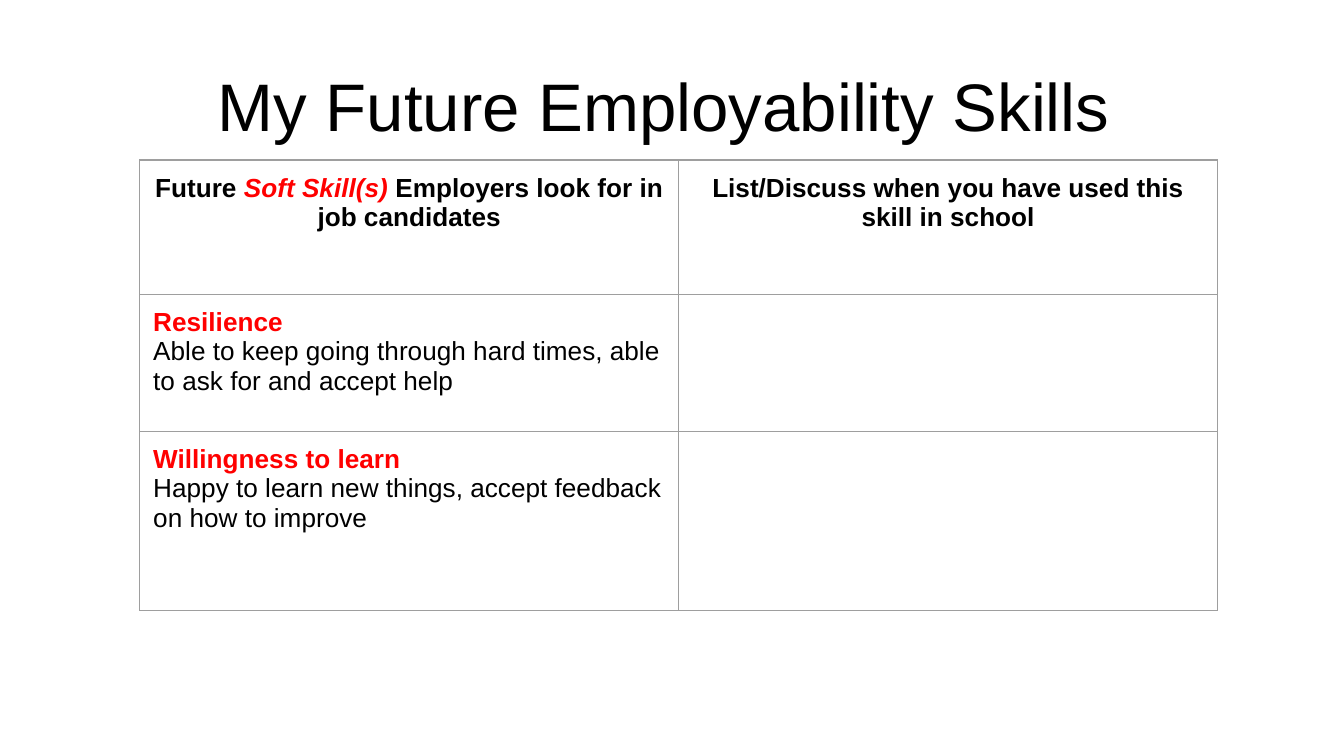
from lxml import etree
from pptx import Presentation
from pptx.dml.color import RGBColor
from pptx.enum.text import MSO_ANCHOR, PP_ALIGN
from pptx.oxml.ns import qn
from pptx.util import Inches, Pt

CENTER, LEFT = PP_ALIGN.CENTER, PP_ALIGN.LEFT
MIDDLE, TOP = MSO_ANCHOR.MIDDLE, MSO_ANCHOR.TOP
TITLE_ONLY = 5
BLACK, RED, GREY = "000000", "FF0000", "9E9E9E"

SLIDE_WIDTH = 10
SLIDE_HEIGHT = SLIDE_WIDTH * 9 / 16
COLUMN_WIDTHS = [4.01, 4.01]
ROW_HEIGHTS = [1, 1.02, 1.33]
HEADERS = [
    [("Future ", BLACK, False), ("Soft Skill(s) ", RED, True),
     ("Employers look for in job candidates", BLACK, False)],
    [("List/Discuss when you have used this skill in school", BLACK, False)],
]
SKILLS = [
    ("Resilience",
     "Able to keep going through hard times, able to ask for and accept help"),
    ("Willingness to learn",
     "Happy to learn new things, accept feedback on how to improve"),
]


def color(value):
    return RGBColor.from_string(value)


class SlideBuilder:
    font = "Arial"
    title_size = 36
    body_size = 14
    margin = 0.1
    border_width = 0.75

    def __init__(self, slide):
        self.slide = slide

    def add_run(self, paragraph, text, size, fill=BLACK, bold=False, italic=False):
        run = paragraph.add_run()
        run.text = text
        run.font.name = self.font
        run.font.size = Pt(size)
        run.font.bold = bold
        run.font.italic = italic
        run.font.color.rgb = color(fill)

    def set_margins(self, target):
        for side in ("left", "top", "right", "bottom"):
            setattr(target, f"margin_{side}", Inches(self.margin))

    def title(self, text, left, top, width, height):
        shape = self.slide.shapes.title
        shape.left, shape.top = Inches(left), Inches(top)
        shape.width, shape.height = Inches(width), Inches(height)
        frame = shape.text_frame
        frame.word_wrap = True
        frame.vertical_anchor = MIDDLE
        self.set_margins(frame)
        paragraph = frame.paragraphs[0]
        paragraph.alignment = CENTER
        self.add_run(paragraph, text, self.title_size)

    def table(self, left, top, widths, heights):
        table = self.slide.shapes.add_table(
            len(heights), len(widths), Inches(left), Inches(top),
            Inches(sum(widths)), Inches(sum(heights))).table
        table.first_row = table.horz_banding = False
        for column, width in zip(table.columns, widths):
            column.width = Inches(width)
        for row, height in zip(table.rows, heights):
            row.height = Inches(height)
        for cell in table.iter_cells():
            self.set_margins(cell)
            cell.vertical_anchor = TOP
            self.borders(cell)
            cell.fill.background()
        return table

    def borders(self, cell):
        properties = cell._tc.get_or_add_tcPr()
        for tag in ("a:lnL", "a:lnR", "a:lnT", "a:lnB"):
            line = etree.SubElement(properties, qn(tag), w=str(Pt(self.border_width)))
            fill = etree.SubElement(line, qn("a:solidFill"))
            etree.SubElement(fill, qn("a:srgbClr"), val=GREY)

    def header_cell(self, cell, runs):
        paragraph = cell.text_frame.paragraphs[0]
        paragraph.alignment = CENTER
        for text, fill, italic in runs:
            self.add_run(paragraph, text, self.body_size, fill, True, italic)

    def skill_cell(self, cell, name, description):
        frame = cell.text_frame
        heading, body = frame.paragraphs[0], frame.add_paragraph()
        heading.alignment = body.alignment = LEFT
        self.add_run(heading, name, self.body_size, RED, bold=True)
        self.add_run(body, description, self.body_size)


def main():
    presentation = Presentation()
    presentation.slide_width = Inches(SLIDE_WIDTH)
    presentation.slide_height = Inches(SLIDE_HEIGHT)
    slide = presentation.slides.add_slide(presentation.slide_layouts[TITLE_ONLY])
    builder = SlideBuilder(slide)

    # Title
    builder.title("My Future Employability Skills", 0.28, 0.32, 9.32, 0.92)

    # Skills table, with the second column left for answers
    table = builder.table(1.04, 1.19, COLUMN_WIDTHS, ROW_HEIGHTS)
    for column, runs in enumerate(HEADERS):
        builder.header_cell(table.cell(0, column), runs)
    for row, (name, description) in enumerate(SKILLS, start=1):
        builder.skill_cell(table.cell(row, 0), name, description)

    presentation.save("out.pptx")


if __name__ == "__main__":
    main()
